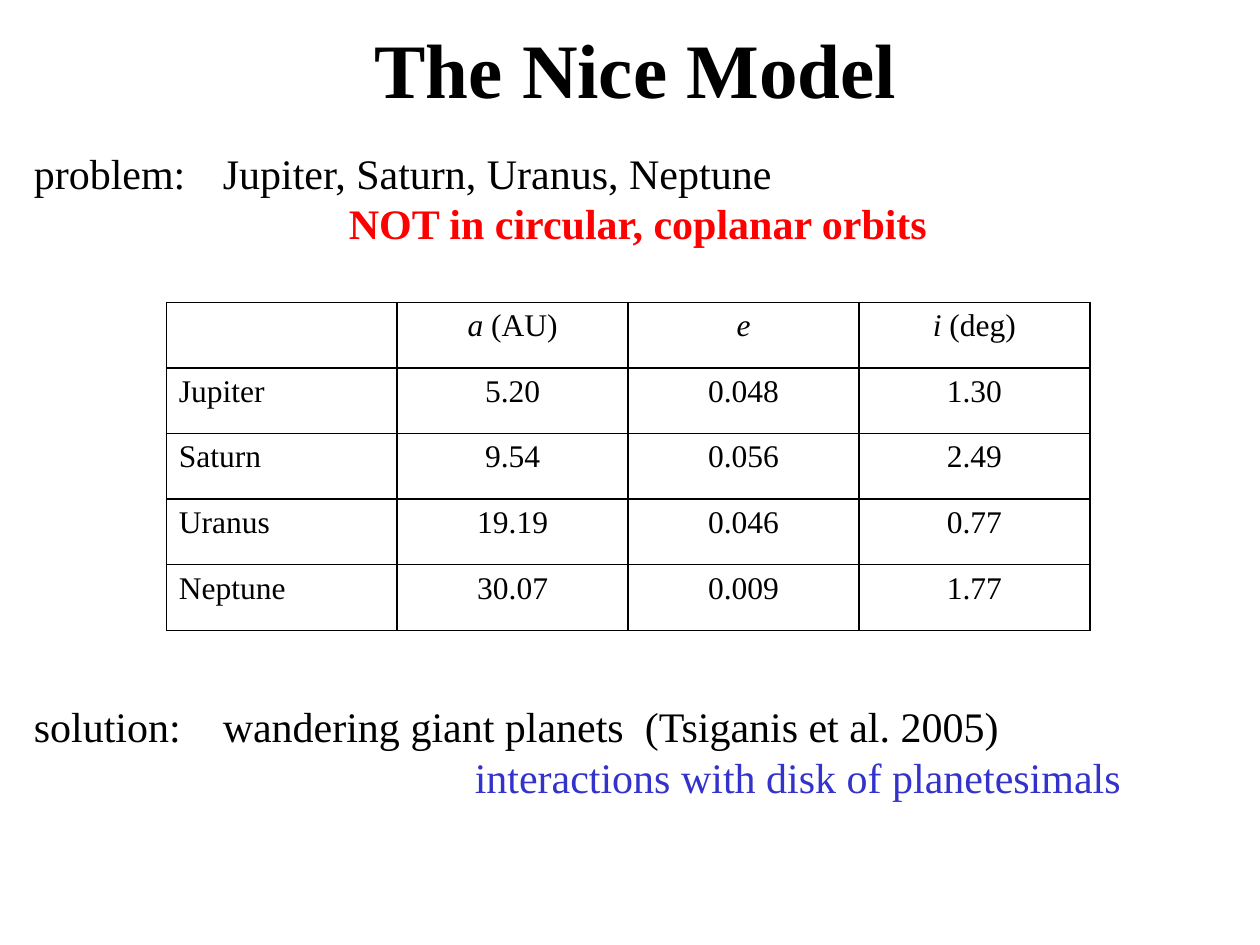
"""Build a slide on the Nice Model with a table of giant planet orbits."""
from dataclasses import dataclass, field

from lxml import etree
from pptx import Presentation, util as u
from pptx.dml.color import RGBColor
from pptx.enum import text
from pptx.oxml import ns

WIDTH, HEIGHT = u.Inches(10), u.Inches(7.5)
CENTER = text.PP_ALIGN.CENTER


@dataclass(frozen=True)
class Theme:
    face: str = "Times New Roman"
    ink: str = "000000"
    warning: str = "FF0000"
    accent: str = "3333CC"
    title: int = 44
    body: int = 24
    cell: int = 18
    border: float = 1


THEME = Theme()


@dataclass(frozen=True)
class Area:
    left: float
    top: float
    width: float
    height: float

    def emu(self) -> tuple:
        return (int(self.left * WIDTH), int(self.top * HEIGHT),
                int(self.width * WIDTH), int(self.height * HEIGHT))


@dataclass(frozen=True)
class Run:
    words: str
    size: int = THEME.cell
    color: str = THEME.ink
    style: dict = field(default_factory=dict)


@dataclass(frozen=True)
class Line:
    runs: tuple
    align: object = None
    margin: float = 0
    indent: float = 0


@dataclass(frozen=True)
class Block:
    area: Area
    lines: tuple
    anchor: object = text.MSO_ANCHOR.TOP


def statement(top: float, lead: str, follow: Run, margin: float) -> Block:
    return Block(Area(0.017, top, 0.967, 0.121), (
        Line((Run(lead, THEME.body),), margin=0.5, indent=-0.5),
        Line((follow,), margin=margin),
    ))


BLOCKS = (
    Block(Area(0.067, 0, 0.875, 0.144),
          (Line((Run("The Nice Model", THEME.title, style={"bold": True}),), CENTER),),
          text.MSO_ANCHOR.MIDDLE),
    statement(0.149, "problem:\tJupiter, Saturn, Uranus, Neptune",
              Run("NOT in circular, coplanar orbits", THEME.body, THEME.warning,
                  {"bold": True}), 2.5),
    statement(0.735, "solution:\twandering giant planets  (Tsiganis et al. 2005)",
              Run("interactions with disk of planetesimals", THEME.body, THEME.accent), 3.5),
)

ORBIT_AREA = Area(0.132, 0.32, 0.733, 0.347)
HEADINGS = (("", ""), ("a", " (AU)"), ("e", ""), ("i", " (deg)"))
ORBITS = (
    ("Jupiter", "5.20", "0.048", "1.30"),
    ("Saturn", "9.54", "0.056", "2.49"),
    ("Uranus", "19.19", "0.046", "0.77"),
    ("Neptune", "30.07", "0.009", "1.77"),
)


def write_line(paragraph, line: Line) -> None:
    paragraph.alignment = line.align
    if line.margin:
        properties = paragraph._p.get_or_add_pPr()
        properties.set("marL", str(u.Inches(line.margin)))
        properties.set("indent", str(u.Inches(line.indent)))
    for part in line.runs:
        if not part.words:
            continue
        run = paragraph.add_run()
        run.text = part.words
        formats = {"name": THEME.face, "size": u.Pt(part.size), **part.style}
        for key, value in formats.items():
            setattr(run.font, key, value)
        run.font.color.rgb = RGBColor.from_string(part.color)


def draw_block(slide, block: Block) -> None:
    frame = slide.shapes.add_textbox(*block.area.emu()).text_frame
    for key, value in {"word_wrap": True, "vertical_anchor": block.anchor}.items():
        setattr(frame, key, value)
    for index, line in enumerate(block.lines):
        write_line(frame.add_paragraph() if index else frame.paragraphs[0], line)


def border_cell(cell) -> None:
    properties = cell._tc.get_or_add_tcPr()
    for side in ("a:lnL", "a:lnR", "a:lnT", "a:lnB"):
        edge = etree.SubElement(properties, ns.qn(side), w=str(u.Pt(THEME.border)))
        fill = etree.SubElement(edge, ns.qn("a:solidFill"))
        etree.SubElement(fill, ns.qn("a:srgbClr"), val=THEME.ink)


def draw_orbits(slide) -> None:
    heading = [(Run(symbol, style={"italic": True}), Run(unit)) for symbol, unit in HEADINGS]
    rows = [heading] + [[(Run(value),) for value in orbit] for orbit in ORBITS]
    table = slide.shapes.add_table(len(rows), len(HEADINGS), *ORBIT_AREA.emu()).table
    for key in ("first_row", "horz_banding"):
        setattr(table, key, False)
    for row, entries in enumerate(rows):
        for column, runs in enumerate(entries):
            cell = table.cell(row, column)
            border_cell(cell)
            cell.fill.background()
            write_line(cell.text_frame.paragraphs[0], Line(runs, CENTER if column else None))


def main() -> None:
    deck = Presentation()
    for key, value in {"slide_width": WIDTH, "slide_height": HEIGHT}.items():
        setattr(deck, key, value)
    slide = deck.slides.add_slide(deck.slide_layouts[6])
    for block in BLOCKS:
        draw_block(slide, block)
    draw_orbits(slide)
    deck.save("out.pptx")


if __name__ == "__main__":
    main()
